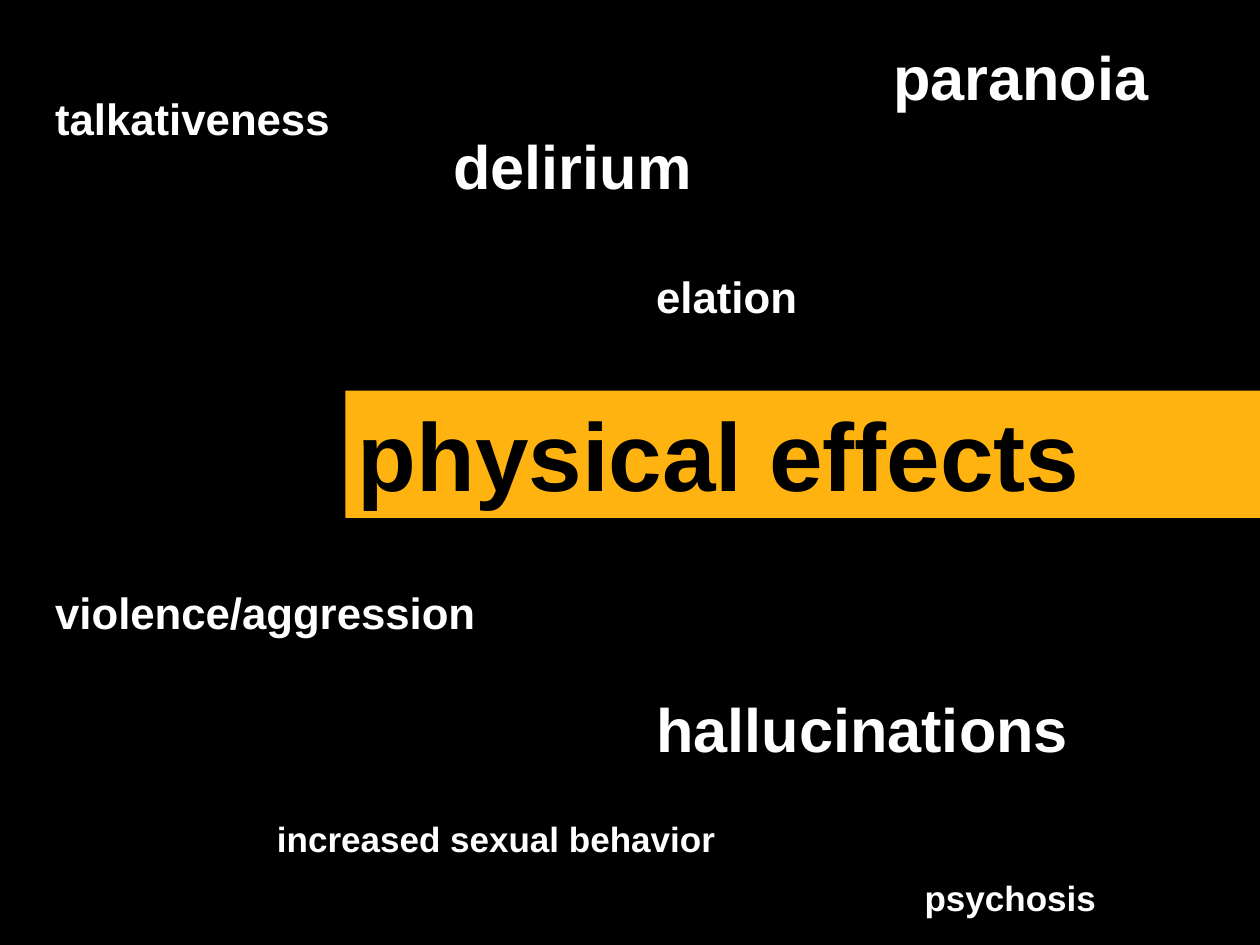
from pptx import Presentation
from pptx.dml.color import RGBColor
from pptx.enum.text import MSO_ANCHOR, MSO_AUTO_SIZE, PP_ALIGN
from pptx.util import Inches, Pt

BLACK = RGBColor(0x00, 0x00, 0x00)
WHITE = RGBColor(0xFF, 0xFF, 0xFF)
AMBER = RGBColor(0xFF, 0xB3, 0x10)
FONT = "Arial"
WIDE, HIGH = 10, 7.5
TALL = {20: 0.44, 25: 0.52, 35: 0.69}

WORDS = [
    ("elation", 5.11, 2.09, 25),
    ("violence/aggression", 0.34, 4.6, 25),
    ("paranoia", 6.99, 0.26, 35),
    ("hallucinations", 5.11, 5.44, 35),
    ("talkativeness", 0.34, 0.68, 25),
    ("psychosis", 7.24, 6.91, 20),
    ("increased sexual behavior", 2.1, 6.44, 20),
    ("delirium", 3.5, 0.97, 35),
]


def write(frame, text, size, color):
    frame.word_wrap = True
    frame.auto_size = MSO_AUTO_SIZE.NONE
    frame.vertical_anchor = MSO_ANCHOR.TOP
    para = frame.paragraphs[0]
    para.alignment = PP_ALIGN.LEFT
    run = para.add_run()
    run.text = text
    font = run.font
    font.name, font.size, font.bold = FONT, Pt(size), True
    font.color.rgb = color
    return para


def add_title(slide, text, left, top, width, height):
    title = slide.shapes.title
    title.left, title.top = Inches(left), Inches(top)
    title.width, title.height = Inches(width), Inches(height)
    title.fill.solid()
    title.fill.fore_color.rgb = AMBER
    para = write(title.text_frame, text, 55, BLACK)
    para.line_spacing = Pt(65)
    para.space_before = Pt(0)


def add_word(slide, text, left, top, size):
    width = min(5.1, WIDE - left)
    box = slide.shapes.add_textbox(
        Inches(left), Inches(top), Inches(width), Inches(TALL[size])
    )
    write(box.text_frame, text, size, WHITE)


def main():
    deck = Presentation()
    deck.slide_width, deck.slide_height = Inches(WIDE), Inches(HIGH)
    slide = deck.slides.add_slide(deck.slide_layouts[5])
    slide.background.fill.solid()
    slide.background.fill.fore_color.rgb = BLACK
    add_title(slide, "physical effects", 2.74, 3.1, WIDE - 2.74, 1.01)
    for word in WORDS:
        add_word(slide, *word)
    deck.save("out.pptx")


if __name__ == "__main__":
    main()
